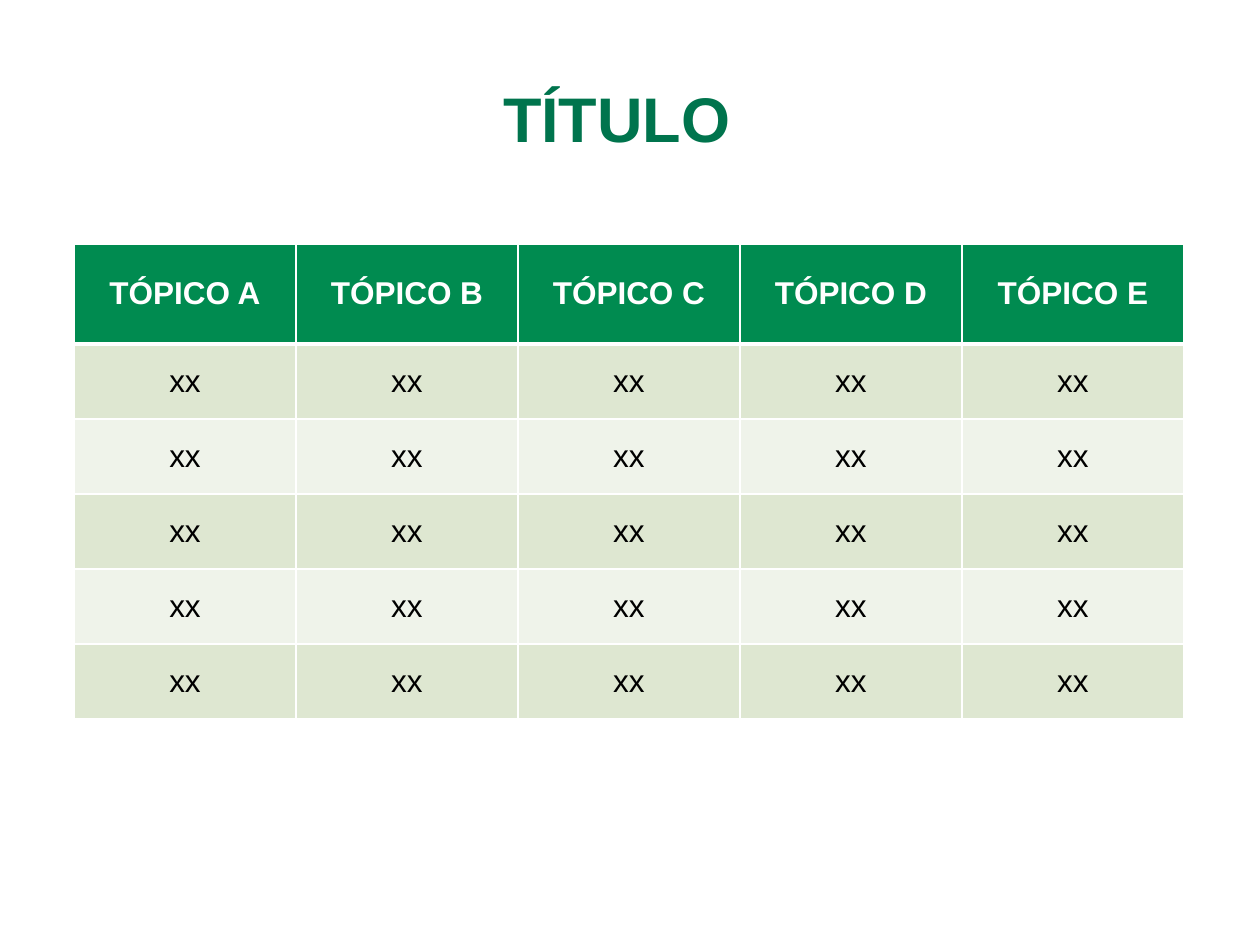
from lxml.etree import SubElement
from pptx import Presentation
from pptx.dml.color import RGBColor as RGB
from pptx.enum.text import MSO_ANCHOR as Anchor, MSO_AUTO_SIZE as Fit, PP_ALIGN as Align
from pptx.oxml.ns import qn
from pptx.util import Pt

TITLE = "TÍTULO"
HEADS = ["TÓPICO A", "TÓPICO B", "TÓPICO C", "TÓPICO D", "TÓPICO E"]
ROWS = [HEADS] + [["xx"] * len(HEADS) for _ in range(5)]

FONT = "Arial"
WHITE = RGB(0xFF, 0xFF, 0xFF)
BLACK = RGB(0x00, 0x00, 0x00)
DARK = RGB(0x00, 0x74, 0x4D)
GREEN = RGB(0x00, 0x8B, 0x50)
BANDS = [RGB(0xEF, 0xF3, 0xEA), RGB(0xDE, 0xE7, 0xD1)]

LEFT, TOP = 74, 244
COL_W, HEAD_H, ROW_H = 222, 100, 75
THIN, THICK = 1, 3


def px(n):
    return round(n * 914400 / 126)


def write(frame, text, size=18, color=BLACK, bold=False, spacing=None):
    frame.text = text
    par = frame.paragraphs[0]
    par.alignment = Align.CENTER
    par.line_spacing = spacing
    font = par.runs[0].font
    font.name, font.size, font.bold = FONT, Pt(size), bold
    font.color.rgb = color


def edge(cell, **widths):
    """Draw white borders; must come before the cell's fill."""
    props = cell._tc.get_or_add_tcPr()
    for side in "LRTB":
        line = SubElement(props, qn(f"a:ln{side}"), w=str(Pt(widths.get(side, THIN))))
        fill = SubElement(line, qn("a:solidFill"))
        SubElement(fill, qn("a:srgbClr"), val=str(WHITE))


def add_title(slide):
    title = slide.shapes.title
    title.left, title.top, title.width, title.height = map(px, (0, 45, 1260, 117))
    frame = title.text_frame
    frame.auto_size = Fit.NONE
    frame.vertical_anchor = Anchor.BOTTOM
    frame.margin_right = px(39)
    write(frame, TITLE, size=36, color=DARK, bold=True, spacing=0.9)


def add_grid(slide):
    rows, cols = len(ROWS), len(HEADS)
    high = HEAD_H + ROW_H * (rows - 1)
    box = map(px, (LEFT, TOP, COL_W * cols, high))
    table = slide.shapes.add_table(rows, cols, *box).table
    for col in table.columns:
        col.width = px(COL_W)
    for r, texts in enumerate(ROWS):
        head = r == 0
        table.rows[r].height = px(HEAD_H if head else ROW_H)
        for c, text in enumerate(texts):
            cell = table.cell(r, c)
            edge(cell, T=THICK if r == 1 else THIN, B=THICK if head else THIN)
            cell.fill.solid()
            cell.fill.fore_color.rgb = GREEN if head else BANDS[r % 2]
            cell.vertical_anchor = Anchor.MIDDLE
            write(cell.text_frame, text, color=WHITE if head else BLACK, bold=head)


def main():
    deck = Presentation()
    deck.slide_width, deck.slide_height = px(1260), px(945)
    slide = deck.slides.add_slide(deck.slide_layouts[5])
    add_grid(slide)
    add_title(slide)
    deck.save("out.pptx")


if __name__ == "__main__":
    main()
